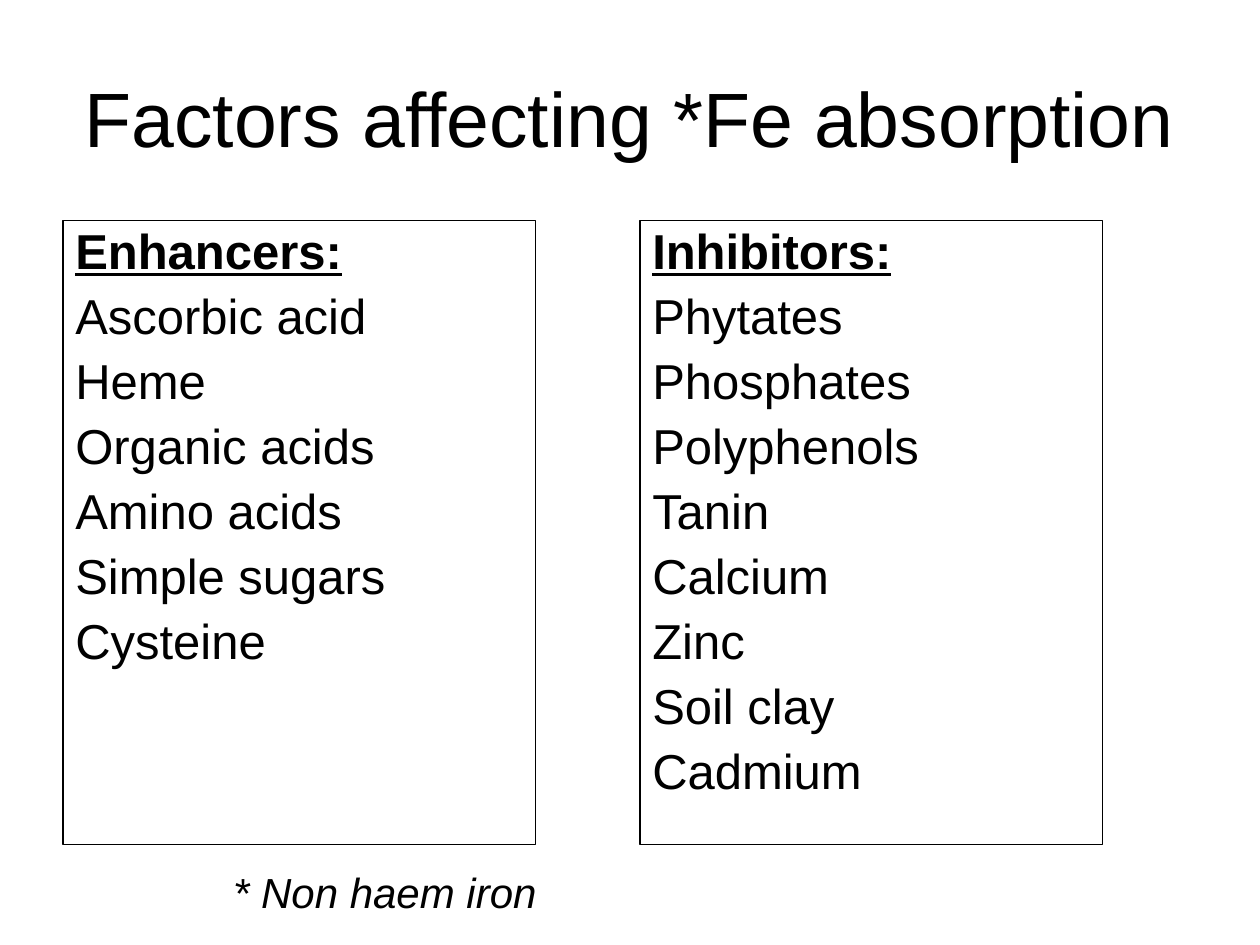
import pptx
import pptx.dml.color
import pptx.enum.shapes
import pptx.enum.text
import pptx.util
from dataclasses import dataclass

Cm = pptx.util.Cm
Pt = pptx.util.Pt

TITLE = "Factors affecting *Fe absorption"
FOOTNOTE = "* Non haem iron"
# Each panel: left and width in cm, heading, factors
PANELS = [
    (1.27, 9.53, "Enhancers:",
     ["Ascorbic acid", "Heme", "Organic acids", "Amino acids",
      "Simple sugars", "Cysteine"]),
    (12.9, 9.32, "Inhibitors:",
     ["Phytates", "Phosphates", "Polyphenols", "Tanin", "Calcium",
      "Zinc", "Soil clay", "Cadmium"]),
]
PANEL_TOP, PANEL_HEIGHT = Cm(4.45), Cm(12.57)


@dataclass(frozen=True)
class Theme:
    font: str = "Arial"
    ink: pptx.dml.color.RGBColor = pptx.dml.color.RGBColor(0, 0, 0)
    title_size: int = 44
    body_size: int = 28
    footnote_size: int = 24
    outline: float = 0.75
    line_spacing: float = 0.9
    space_before: float = 6.9


THEME = Theme()


def format_runs(paragraph, size, bold=False, italic=False, underline=False):
    for run in paragraph.runs:
        font = run.font
        font.name = THEME.font
        font.size = Pt(size)
        font.color.rgb = THEME.ink
        font.bold, font.italic, font.underline = bold, italic, underline


def add_line_of_text(slide, text, box, size, italic=False):
    frame = slide.shapes.add_textbox(*box).text_frame
    frame.word_wrap = True
    frame.text = text
    format_runs(frame.paragraphs[0], size, italic=italic)
    return frame


def add_panel(slide, left, width, heading, factors):
    panel = slide.shapes.add_shape(
        pptx.enum.shapes.MSO_SHAPE.RECTANGLE,
        Cm(left), PANEL_TOP, Cm(width), PANEL_HEIGHT)
    panel.shadow.inherit = False
    panel.fill.background()
    panel.line.color.rgb = THEME.ink
    panel.line.width = Pt(THEME.outline)

    frame = panel.text_frame
    frame.word_wrap = True
    frame.vertical_anchor = pptx.enum.text.MSO_ANCHOR.TOP
    frame.text = "\n".join([heading, *factors])
    for index, paragraph in enumerate(frame.paragraphs):
        is_heading = index == 0
        paragraph.alignment = pptx.enum.text.PP_ALIGN.LEFT
        paragraph.line_spacing = THEME.line_spacing
        paragraph.space_before = Pt(THEME.space_before)
        format_runs(paragraph, THEME.body_size,
                    bold=is_heading, underline=is_heading)


def main():
    presentation = pptx.Presentation()
    presentation.slide_width, presentation.slide_height = Cm(25.4), Cm(19.05)
    slide = presentation.slides.add_slide(presentation.slide_layouts[6])

    title = add_line_of_text(
        slide, TITLE, (Cm(1.27), Cm(0.76), Cm(22.86), Cm(3.18)),
        THEME.title_size)
    title.vertical_anchor = pptx.enum.text.MSO_ANCHOR.MIDDLE
    title.paragraphs[0].alignment = pptx.enum.text.PP_ALIGN.CENTER

    for panel in PANELS:
        add_panel(slide, *panel)

    footnote = add_line_of_text(
        slide, FOOTNOTE, (Cm(4.45), Cm(17.35), Cm(9.96), Cm(1.27)),
        THEME.footnote_size, italic=True)
    footnote.auto_size = pptx.enum.text.MSO_AUTO_SIZE.SHAPE_TO_FIT_TEXT

    presentation.save("out.pptx")


if __name__ == "__main__":
    main()
